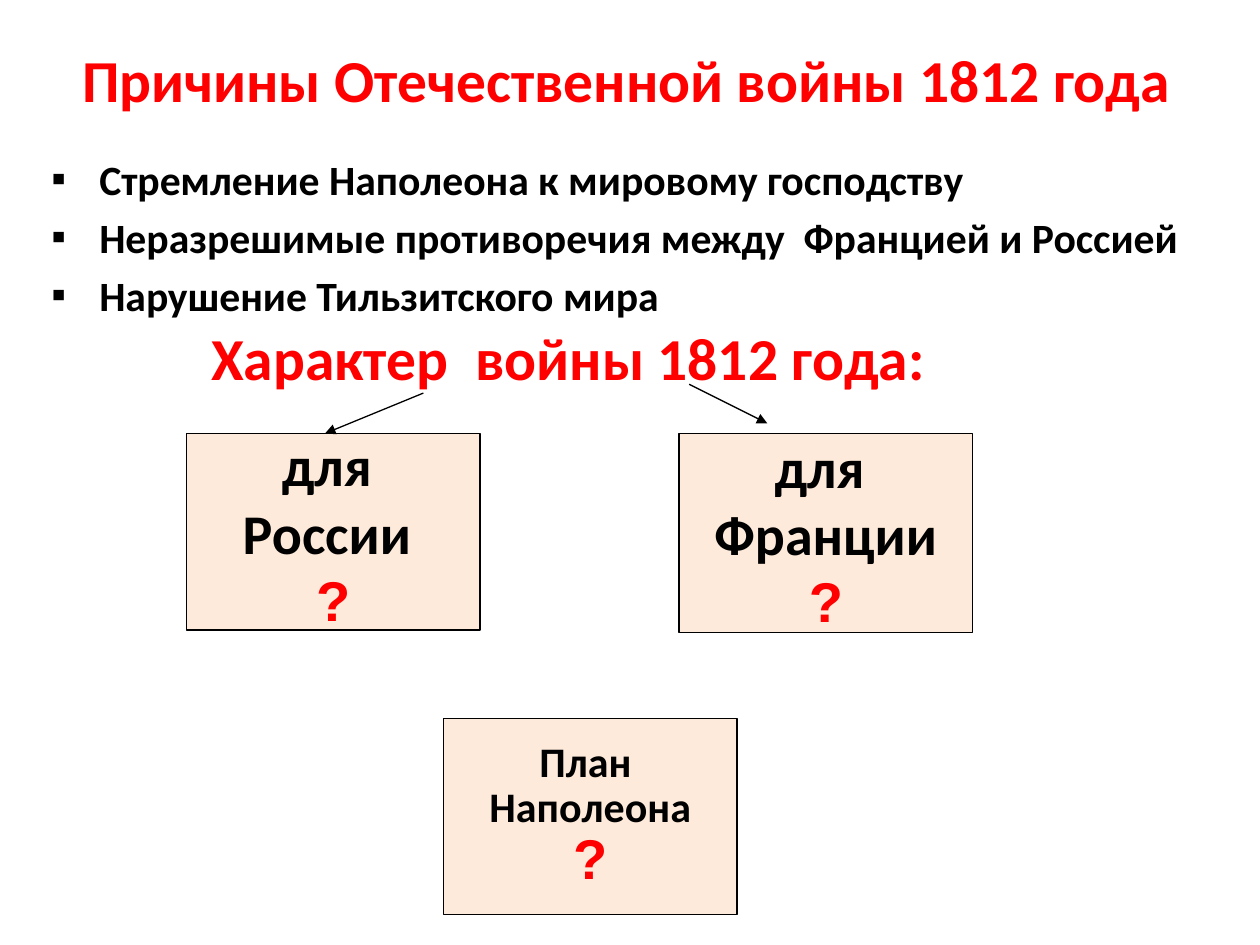
import pptx
import pptx.util
import pptx.dml.color
import pptx.enum.shapes
import pptx.enum.text
import pptx.oxml.ns
from dataclasses import dataclass
from lxml import etree

Pt, Inches = pptx.util.Pt, pptx.util.Inches
RGB = pptx.dml.color.RGBColor.from_string
ALIGN = pptx.enum.text.PP_ALIGN
ANCHOR = pptx.enum.text.MSO_ANCHOR
qn = pptx.oxml.ns.qn


@dataclass(frozen=True)
class Theme:
    ink: str = "000000"
    accent: str = "FF0000"
    panel: str = "FDEADA"
    font: str = "Calibri"
    mark_font: str = "Arial"
    heading: float = 34
    box: float = 32
    small: float = 24
    body: float = 23.8
    line: float = 0.75


class Builder:
    """Places elements on a grid of 100 columns by 75 rows."""
    COLS, ROWS = 100, 75

    def __init__(self, theme):
        self.t = theme
        self.prs = pptx.Presentation()
        self.prs.slide_width, self.prs.slide_height = Inches(10), Inches(7.5)
        self.s = self.prs.slides.add_slide(self.prs.slide_layouts[6])

    def grid(self, *cells):
        units = (self.prs.slide_width / self.COLS, self.prs.slide_height / self.ROWS)
        return [round(c * units[i % 2]) for i, c in enumerate(cells)]

    def put_text(self, sp, lines, frame, para):
        """Each line is (text, size, colour, font)."""
        tf = sp.text_frame
        for name, value in frame.items():
            setattr(tf, name, value)
        for i, (text, size, colour, font) in enumerate(lines):
            p = tf.paragraphs[0] if i == 0 else tf.add_paragraph()
            for name, value in para.items():
                setattr(p, name, value)
            r = p.add_run()
            r.text = text
            for name, value in {"size": Pt(size), "name": font, "bold": True}.items():
                setattr(r.font, name, value)
            r.font.color.rgb = RGB(colour)
        return tf

    def heading(self, cells, text, frame, align):
        sp = self.s.shapes.add_textbox(*self.grid(*cells))
        self.put_text(sp, [(text, self.t.heading, self.t.accent, self.t.font)],
                      frame, {"alignment": align})

    def bullets(self, cells, items):
        sp = self.s.shapes.add_textbox(*self.grid(*cells))
        lines = [(item, self.t.body, self.t.ink, self.t.font) for item in items]
        tf = self.put_text(sp, lines, {"word_wrap": True}, {"space_before": Pt(4.5)})
        indent = Inches(0.38)
        for p in tf.paragraphs:
            pPr = p._p.get_or_add_pPr()
            pPr.set("marL", str(indent))
            pPr.set("indent", str(-indent))
            etree.SubElement(pPr, qn("a:buFont")).set("typeface", self.t.mark_font)
            etree.SubElement(pPr, qn("a:buChar")).set("char", "▪")

    def question_box(self, cells, words, size, spacing=1.0):
        t = self.t
        sp = self.s.shapes.add_shape(pptx.enum.shapes.MSO_SHAPE.RECTANGLE, *self.grid(*cells))
        sp.shadow.inherit = False
        sp.fill.solid()
        sp.fill.fore_color.rgb = RGB(t.panel)
        sp.line.color.rgb = RGB(t.ink)
        sp.line.width = Pt(t.line)
        lines = [(word, size, t.ink, t.font) for word in words]
        lines.append(("?", t.box, t.accent, t.mark_font))
        self.put_text(sp, lines, {"word_wrap": False, "vertical_anchor": ANCHOR.MIDDLE},
                      {"alignment": ALIGN.CENTER, "line_spacing": spacing})

    def arrow(self, *cells):
        c = self.s.shapes.add_connector(pptx.enum.shapes.MSO_CONNECTOR.STRAIGHT,
                                        *self.grid(*cells))
        c.line.color.rgb = RGB(self.t.ink)
        c.line.width = Pt(self.t.line)
        spPr = c._element.spPr
        etree.SubElement(spPr.find(qn("a:ln")), qn("a:tailEnd")).set("type", "triangle")
        etree.SubElement(spPr, qn("a:effectLst"))


def main():
    t = Theme()
    b = Builder(t)

    # Title and causes
    b.heading((4.7, 0, 90, 12.5), "Причины Отечественной войны 1812 года",
              {"word_wrap": True, "vertical_anchor": ANCHOR.MIDDLE}, ALIGN.CENTER)
    b.bullets((3.1, 11.7, 95.3, 13.3), [
        "Стремление Наполеона к мировому господству",
        "Неразрешимые противоречия между  Францией и Россией",
        "Нарушение Тильзитского мира",
    ])

    # Character of the war, for each side
    b.heading((14.8, 25, 61.2, 12.5), "Характер  войны 1812 года:",
              {"word_wrap": False, "margin_left": Inches(0.2)}, ALIGN.LEFT)
    b.question_box((14.8, 34.4, 23.3, 15.6), ["для ", "России "], t.box)
    b.question_box((53.9, 34.4, 23.3, 15.8), ["для ", "Франции"], t.box)
    b.arrow(33.6, 31.2, 25.8, 34.4)
    b.arrow(54.7, 30.5, 60.9, 33.6)

    # Plan
    b.question_box((35.2, 57, 23.3, 15.6), ["План ", "Наполеона"], t.small, 0.9)

    b.prs.save("out.pptx")


if __name__ == "__main__":
    main()
